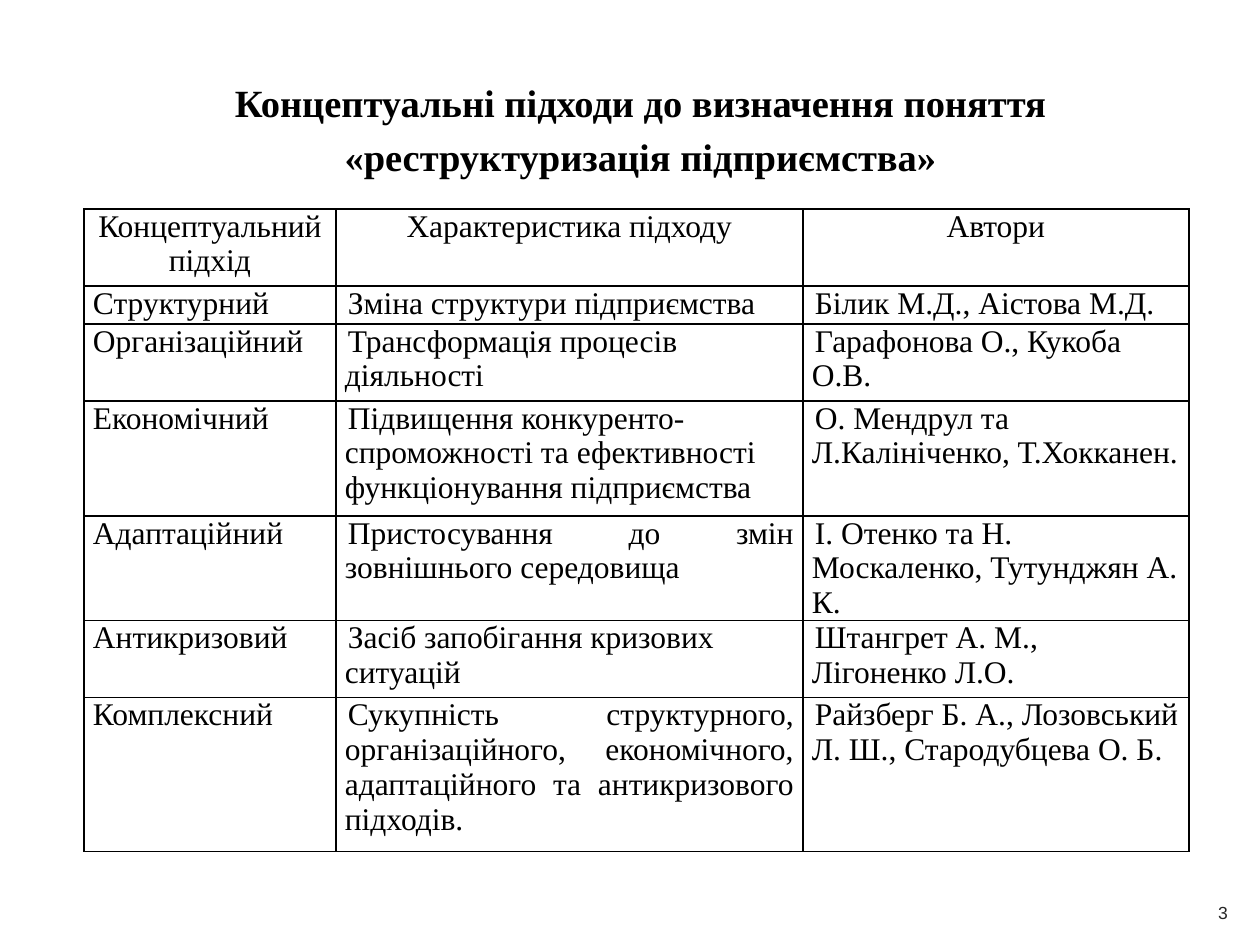
from lxml.etree import SubElement
from pptx import Presentation
from pptx.dml.color import RGBColor
from pptx.enum.text import MSO_ANCHOR as Anchor, PP_ALIGN as Align
from pptx.oxml.ns import qn
from pptx.util import Pt

PX = 914400 // 126
BLACK = RGBColor(0, 0, 0)
GRAY = RGBColor(0x26, 0x26, 0x26)
SERIF = "Times New Roman"

TITLE = "Концептуальні підходи до визначення поняття\n«реструктуризація підприємства»"
ROWS = [
    ("Концептуальний підхід", "Характеристика підходу", "Автори"),
    ("Структурний", "Зміна структури підприємства", "Білик М.Д., Аістова М.Д."),
    ("Організаційний", "Трансформація процесів діяльності", "Гарафонова О., Кукоба О.В."),
    ("Економічний",
     "Підвищення конкуренто-спроможності та ефективності функціонування підприємства",
     "О. Мендрул та Л.Калініченко, Т.Хокканен."),
    ("Адаптаційний", "Пристосування до змін зовнішнього середовища",
     "І. Отенко та Н. Москаленко, Тутунджян А. К."),
    ("Антикризовий", "Засіб запобігання кризових ситуацій",
     "Штангрет А. М., Лігоненко Л.О."),
    ("Комплексний",
     "Сукупність структурного, організаційного, економічного, "
     "адаптаційного та антикризового підходів.",
     "Райзберг Б. А., Лозовський Л. Ш., Стародубцева О. Б."),
]
WIDTHS = [252, 467, 386]
HEIGHTS = [77, 38, 77, 115, 77, 77, 154]
JUSTIFIED = {(4, 1), (6, 1)}  # besides the first column


def px(*nums):
    return [n * PX for n in nums]


def style(para, name, size, color, align, bold=False):
    para.alignment = align
    for run in para.runs:
        font = run.font
        font.name, font.size, font.bold = name, Pt(size), bold
        font.color.rgb = color


def border(cell):
    props = cell._tc.get_or_add_tcPr()
    for n, side in enumerate(("lnL", "lnR", "lnT", "lnB")):
        line = props.makeelement(qn("a:" + side), {"w": str(Pt(1))})
        fill = SubElement(line, qn("a:solidFill"))
        SubElement(fill, qn("a:srgbClr"), val=str(BLACK))
        props.insert(n, line)


def align(row, col):
    if row == 0:
        return Align.CENTER
    return Align.JUSTIFY if col == 0 or (row, col) in JUSTIFIED else Align.LEFT


deck = Presentation()
deck.slide_width, deck.slide_height = px(1260, 945)
slide = deck.slides.add_slide(deck.slide_layouts[5])

# Title
title = slide.shapes.title
title.left, title.top, title.width, title.height = px(58, 67, 1165, 144)
frame = title.text_frame
frame.text = TITLE
frame.vertical_anchor = Anchor.TOP
frame.margin_top = 12 * PX
for n, para in enumerate(frame.paragraphs):
    style(para, SERIF, 22, BLACK, Align.CENTER, True)
    if n:
        para.space_before = Pt(4.4)

# Table of approaches
box = px(84, 209, sum(WIDTHS), sum(HEIGHTS))
table = slide.shapes.add_table(len(ROWS), len(WIDTHS), *box).table
for col, width in zip(table.columns, WIDTHS):
    col.width = width * PX
for r, (texts, height) in enumerate(zip(ROWS, HEIGHTS)):
    table.rows[r].height = height * PX
    for c, text in enumerate(texts):
        cell = table.cell(r, c)
        cell.text = text
        cell.margin_left = cell.margin_right = 9 * PX
        cell.margin_top = cell.margin_bottom = 0
        cell.fill.background()
        border(cell)
        para = cell.text_frame.paragraphs[0]
        style(para, SERIF, 18, BLACK, align(r, c))
        if r and c:
            para._p.get_or_add_pPr().set("indent", str(3 * PX))

# Page number
frame = slide.shapes.add_textbox(*px(1191, 888, 64, 50)).text_frame
frame.word_wrap = True
frame.vertical_anchor = Anchor.MIDDLE
frame.text = "3"
style(frame.paragraphs[0], "Arial", 10, GRAY, Align.CENTER)

deck.save("out.pptx")
